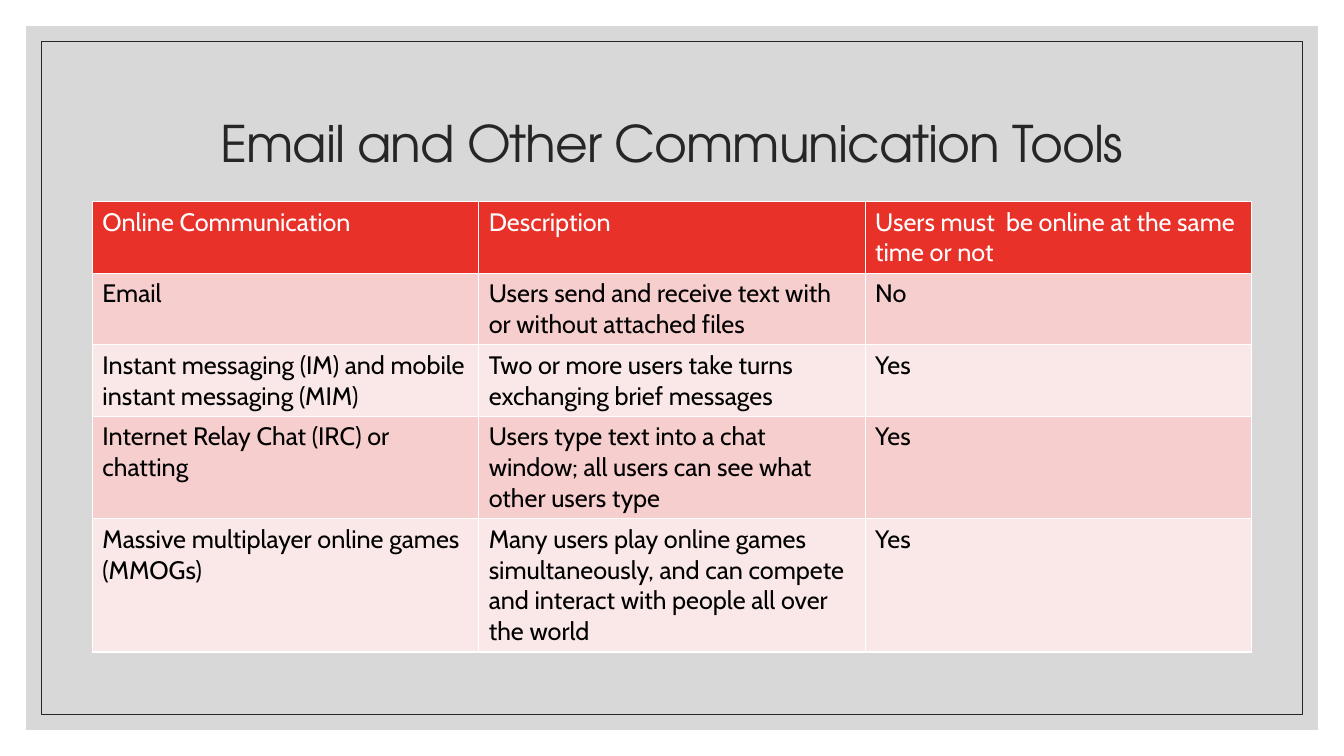
from dataclasses import dataclass
from typing import Any, Optional

from lxml.etree import SubElement
from pptx import Presentation
from pptx.dml.color import RGBColor
from pptx.enum.shapes import MSO_SHAPE
from pptx.enum.text import MSO_ANCHOR, MSO_AUTO_SIZE, PP_ALIGN
from pptx.oxml.ns import qn
from pptx.util import Pt

WHITE = RGBColor(0xFF, 0xFF, 0xFF)
BLACK = RGBColor(0x00, 0x00, 0x00)
INK = RGBColor(0x26, 0x26, 0x26)
GREY = RGBColor(0xBF, 0xBF, 0xBF)
RED = RGBColor(0xE7, 0x31, 0x29)
ROSE = RGBColor(0xF6, 0xCE, 0xCD)
PALE_ROSE = RGBColor(0xFA, 0xE8, 0xE8)

TITLE_FONT = {"name": "TeX Gyre Adventor", "size": Pt(36), "bold": False}
CELL_FONT = {"name": "Cabin", "size": Pt(18), "bold": False}
TITLE_FRAME = {
    "word_wrap": True,
    "auto_size": MSO_AUTO_SIZE.NONE,
    "vertical_anchor": MSO_ANCHOR.MIDDLE,
}
TITLE_PARAGRAPH = {"alignment": PP_ALIGN.CENTER, "line_spacing": 0.9}
TITLE_PLACE = {"left": Pt(84), "top": Pt(50.4), "width": Pt(792), "height": Pt(108)}
CELL_MARGINS = {
    "margin_left": Pt(7.2),
    "margin_right": Pt(7.2),
    "margin_top": Pt(3.6),
    "margin_bottom": Pt(3.6),
}


@dataclass
class Panel:
    """A centred rectangle at an equal inset from the slide edges."""
    inset: float
    fill: Optional[RGBColor] = None
    line: Optional[RGBColor] = None


@dataclass
class ToolRow:
    height: float
    texts: tuple[str, str, str]


PANELS = [Panel(18.7, fill=GREY), Panel(29.5, line=INK)]

ROWS = [
    ToolRow(50.8, ("Online Communication", "Description",
                   "Users must  be online at the same time or not")),
    ToolRow(50.8, ("Email",
                   "Users send and receive text with or without attached files", "No")),
    ToolRow(50.8, ("Instant messaging (IM) and mobile instant messaging (MIM)",
                   "Two or more users take turns exchanging brief messages", "Yes")),
    ToolRow(73, ("Internet Relay Chat (IRC) or chatting",
                 "Users type text into a chat window; all users can see what other users type",
                 "Yes")),
    ToolRow(95, ("Massive multiplayer online games (MMOGs)",
                 "Many users play online games simultaneously, and can compete "
                 "and interact with people all over the world", "Yes")),
]
SLIDE_WIDTH, SLIDE_HEIGHT = 960, 540
COLUMN_WIDTH = 276


def apply_format(target: Any, values: dict[str, Any]) -> None:
    for name, value in values.items():
        setattr(target, name, value)


def add_panel(page: Any, panel: Panel) -> None:
    box = page.shapes.add_shape(
        MSO_SHAPE.RECTANGLE, Pt(panel.inset), Pt(panel.inset),
        Pt(SLIDE_WIDTH - 2 * panel.inset), Pt(SLIDE_HEIGHT - 2 * panel.inset))
    box.shadow.inherit = False
    if panel.fill is None:
        box.fill.background()
    else:
        box.fill.solid()
        box.fill.fore_color.rgb = panel.fill
        colour = box.element.spPr.find(f".//{qn('a:srgbClr')}")
        SubElement(colour, qn("a:alpha"), val="60000")
    if panel.line is None:
        box.line.fill.background()
    else:
        box.line.color.rgb = panel.line
        box.line.width = Pt(0.5)


def fill_title(title: Any, text: str) -> None:
    apply_format(title, TITLE_PLACE)
    apply_format(title.text_frame, TITLE_FRAME)
    para = title.text_frame.paragraphs[0]
    apply_format(para, TITLE_PARAGRAPH)
    span = para.add_run()
    span.text = text
    apply_format(span.font, TITLE_FONT)
    span.font.color.rgb = INK
    span.font.element.set("spc", "-70") if hasattr(span.font, "element") else \
        para.runs[0].font._element.set("spc", "-70")
    # Bring the title in front of the panels
    title.element.getparent().append(title.element)


def add_borders(cell: Any) -> None:
    properties = cell._tc.get_or_add_tcPr()
    for position, side in enumerate(("lnL", "lnR", "lnT", "lnB")):
        line = SubElement(properties, qn(f"a:{side}"), w=str(Pt(1)))
        paint = SubElement(line, qn("a:solidFill"))
        SubElement(paint, qn("a:srgbClr"), val=str(WHITE))
        properties.insert(position, line)


def fill_cell(cell: Any, text: str, fill: RGBColor, colour: RGBColor) -> None:
    apply_format(cell, CELL_MARGINS)
    cell.fill.solid()
    cell.fill.fore_color.rgb = fill
    span = cell.text_frame.paragraphs[0].add_run()
    span.text = text
    apply_format(span.font, CELL_FONT)
    span.font.color.rgb = colour
    add_borders(cell)


def add_tool_table(page: Any, rows: list[ToolRow]) -> None:
    columns = len(rows[0].texts)
    table = page.shapes.add_table(
        len(rows), columns, Pt(66), Pt(144),
        Pt(columns * COLUMN_WIDTH), Pt(sum(row.height for row in rows))).table
    for column in table.columns:
        column.width = Pt(COLUMN_WIDTH)
    for index, row in enumerate(rows):
        table.rows[index].height = Pt(row.height)
        band = ROSE if index % 2 else PALE_ROSE
        fill, colour = (band, BLACK) if index else (RED, WHITE)
        for column, text in enumerate(row.texts):
            fill_cell(table.cell(index, column), text, fill, colour)


def main() -> None:
    deck = Presentation()
    deck.slide_width, deck.slide_height = Pt(SLIDE_WIDTH), Pt(SLIDE_HEIGHT)
    page = deck.slides.add_slide(deck.slide_layouts.get_by_name("Title Only"))
    page.background.fill.solid()
    page.background.fill.fore_color.rgb = WHITE

    # Framed backdrop
    for panel in PANELS:
        add_panel(page, panel)

    # Title and table
    fill_title(page.shapes.title, "Email and Other Communication Tools")
    add_tool_table(page, ROWS)
    deck.save("out.pptx")


if __name__ == "__main__":
    main()
